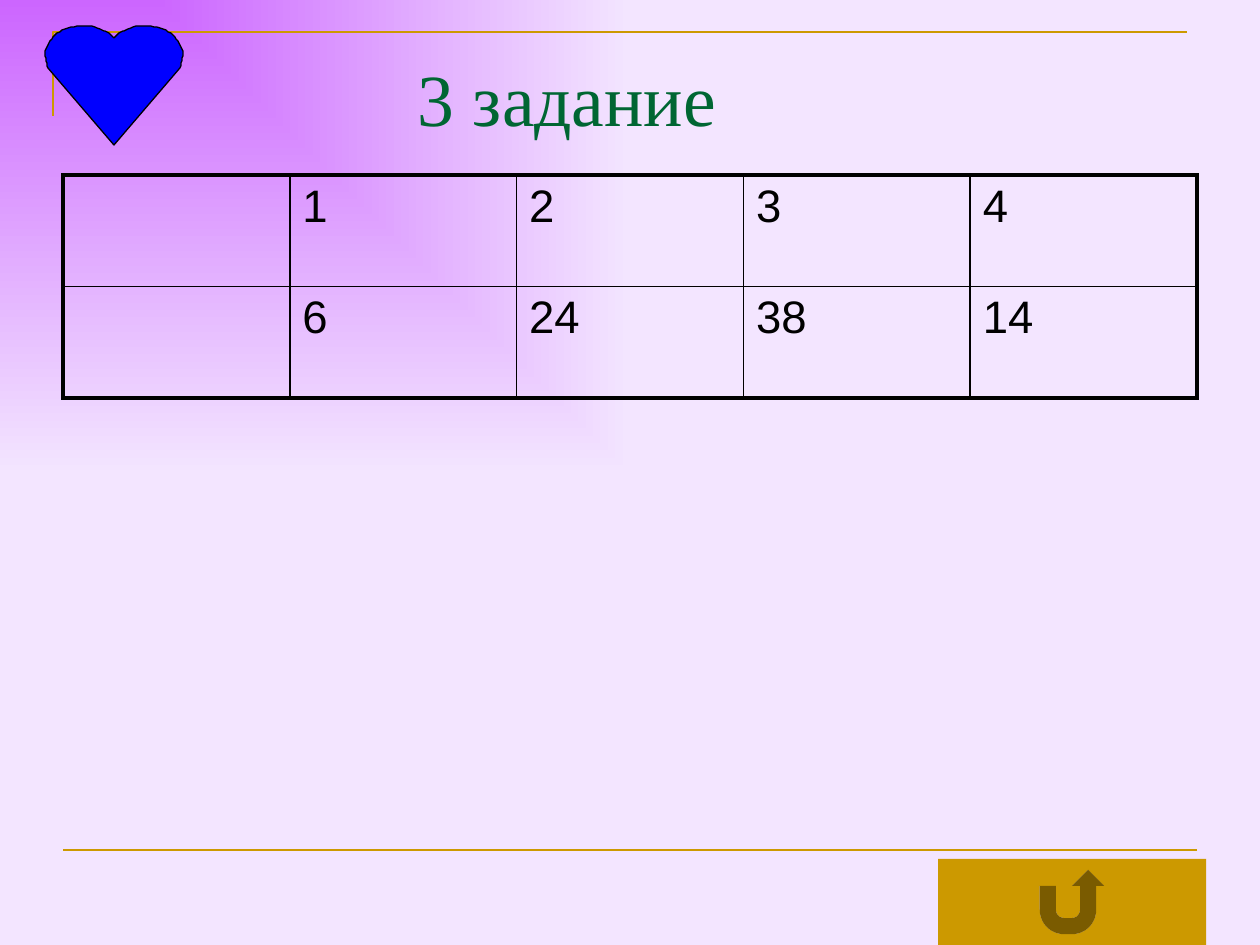
"""Build the third-task slide: a title, a two-row table, a heart and a return button."""
from dataclasses import dataclass

from lxml import etree
from pptx import Presentation
from pptx.dml.color import RGBColor as RGB
from pptx.enum.shapes import MSO_CONNECTOR, MSO_SHAPE
from pptx.enum.text import MSO_ANCHOR, PP_ALIGN
from pptx.oxml import parse_xml
from pptx.oxml.ns import nsdecls, qn
from pptx.util import Pt

TITLE = "3 задание"
ROWS = [["", "1", "2", "3", "4"], ["", "6", "24", "38", "14"]]

TITLE_BOX = (0, 38, 1134, 157)
TITLE_INSET = 15
TABLE_BOX = (63, 175, 1134, 223)
BUTTON_BOX = (938, 859, 268, 86)
FRAME = [(53, 116), (53, 32), (1187, 32)]
FOOTER = (63, 850, 1197, 850)
HEART_AXIS = 114
HEART_TOP = (HEART_AXIS, 38)
HEART_TIP = (HEART_AXIS, 145)
HEART_LEFT = [
    [(112, 35), (106, 31), (102, 30)],
    [(96, 26), (88, 26), (80, 26)],
    [(72, 26), (64, 29), (57, 33)],
    [(52, 38), (48, 44), (46, 49)],
    [(44, 55), (46, 62), (48, 68)],
]
CURVE_STEPS = 8
SCALE = 914400 / 126


@dataclass(frozen=True)
class Theme:
    glow: str = "CC66FF"
    backdrop: str = "F3E5FF"
    gold: str = "CC9900"
    green: str = "006633"
    blue: str = "0000FF"
    black: str = "000000"
    title_font: str = "Times New Roman"
    body_font: str = "Arial"
    title_size: float = 42
    body_size: float = 26
    rule: float = 1.5
    outline: float = 0.75
    outer: float = 2.25
    inner: float = 1


THEME = Theme()


def px(value):
    return round(value * SCALE)


def place(values):
    return [px(value) for value in values]


def color(value):
    return RGB.from_string(value)


def style_line(line, value, width):
    line.color.rgb = color(value)
    line.width = Pt(width)


def style_text(para, font, size, value):
    for span in para.runs:
        span.font.name = font
        span.font.size = Pt(size)
        span.font.color.rgb = color(value)


def paint_background(page):
    fill = page.background.fill
    fill.gradient()
    for stop, value in zip(fill.gradient_stops, (THEME.glow, THEME.backdrop)):
        stop.color.rgb = color(value)
    gradient = page.background._cSld.find(".//" + qn("a:gradFill"))
    gradient.replace(gradient.find(qn("a:lin")), parse_xml(
        f'<a:path {nsdecls("a")} path="rect"><a:fillToRect r="100000" b="100000"/></a:path>'))


def add_outline(page, points, closed):
    builder = page.shapes.build_freeform(*points[0], scale=SCALE)
    builder.add_line_segments(points[1:], close=closed)
    shape = builder.convert_to_shape()
    shape.shadow.inherit = False
    return shape


def curve_points(start, curves):
    points = [start]
    for first, second, end in curves:
        for step in range(1, CURVE_STEPS + 1):
            t = step / CURVE_STEPS
            weights = ((1 - t) ** 3, 3 * t * (1 - t) ** 2, 3 * t * t * (1 - t), t ** 3)
            corners = (start, first, second, end)
            points.append(tuple(
                sum(weight * corner[axis] for weight, corner in zip(weights, corners))
                for axis in (0, 1)))
        start = end
    return points


def add_rules(page):
    frame = add_outline(page, FRAME, False)
    frame.fill.background()
    style_line(frame.line, THEME.gold, THEME.rule)
    footer = page.shapes.add_connector(MSO_CONNECTOR.STRAIGHT, *place(FOOTER))
    style_line(footer.line, THEME.gold, THEME.rule)
    etree.SubElement(footer._element.spPr, qn("a:effectLst"))


def add_title(page):
    box = page.shapes.add_textbox(*place(TITLE_BOX))
    frame = box.text_frame
    frame.word_wrap = True
    frame.vertical_anchor = MSO_ANCHOR.TOP
    frame.margin_top = px(TITLE_INSET)
    frame.text = TITLE
    para = frame.paragraphs[0]
    para.alignment = PP_ALIGN.CENTER
    style_text(para, THEME.title_font, THEME.title_size, THEME.green)


def add_borders(cell, outer_sides):
    properties = cell._tc.get_or_add_tcPr()
    for index, (side, is_outer) in enumerate(outer_sides.items()):
        width = Pt(THEME.outer if is_outer else THEME.inner)
        properties.insert(index, parse_xml(
            f'<a:ln{side} {nsdecls("a")} w="{width}"><a:solidFill>'
            f'<a:srgbClr val="{THEME.black}"/></a:solidFill></a:ln{side}>'))


def add_grid(page):
    last_row, last_column = len(ROWS) - 1, len(ROWS[0]) - 1
    table = page.shapes.add_table(len(ROWS), len(ROWS[0]), *place(TABLE_BOX)).table
    table.first_row = table.horz_banding = False
    for i, row in enumerate(ROWS):
        for j, value in enumerate(row):
            cell = table.cell(i, j)
            cell.text = value
            cell.fill.background()
            style_text(cell.text_frame.paragraphs[0],
                       THEME.body_font, THEME.body_size, THEME.black)
            add_borders(cell, {"L": j == 0, "R": j == last_column,
                               "T": i == 0, "B": i == last_row})


def add_heart(page):
    left = curve_points(HEART_TOP, HEART_LEFT)
    right = [(2 * HEART_AXIS - x, y) for x, y in reversed(left[1:])]
    heart = add_outline(page, left + [HEART_TIP] + right, True)
    heart.fill.solid()
    heart.fill.fore_color.rgb = color(THEME.blue)
    style_line(heart.line, THEME.black, THEME.outline)


def add_return_button(page):
    button = page.shapes.add_shape(MSO_SHAPE.ACTION_BUTTON_RETURN, *place(BUTTON_BOX))
    button.shadow.inherit = False
    button.fill.solid()
    button.fill.fore_color.rgb = color(THEME.gold)
    button.line.fill.background()


def main():
    deck = Presentation()
    deck.slide_width, deck.slide_height = place((1260, 945))
    page = deck.slides.add_slide(deck.slide_layouts[6])
    paint_background(page)
    add_rules(page)
    add_title(page)
    add_grid(page)
    add_heart(page)
    add_return_button(page)
    deck.save("out.pptx")


if __name__ == "__main__":
    main()
